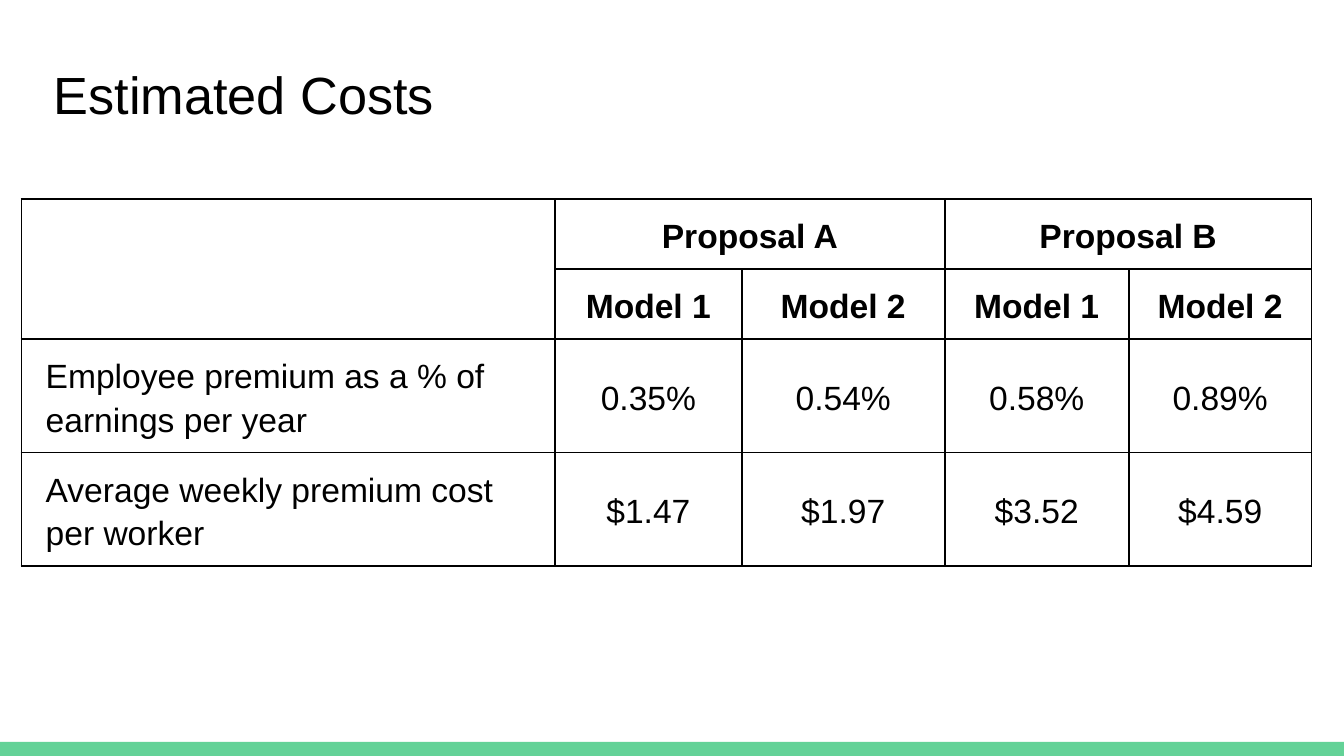
from typing import NamedTuple

from lxml.etree import SubElement
from pptx import Presentation
from pptx.dml.color import RGBColor
from pptx.enum.shapes import MSO_SHAPE as Shape
from pptx.enum.text import MSO_ANCHOR as Anchor, PP_ALIGN as Align
from pptx.oxml.ns import qn
from pptx.util import Inches, Pt

COLORS = {"text": "000000", "border": "000000", "accent": "63D297"}
FONT = "Arial"
SLIDE_WIDTH = Inches(10)
SLIDE_HEIGHT = SLIDE_WIDTH * 9 // 16
COLUMN_WIDTHS = [3.97, 1.39, 1.51, 1.37, 1.36]
ROW_HEIGHTS = [0.37, 0.37, 0.56, 0.48]
TITLE_MARGINS = dict.fromkeys(
    ["margin_left", "margin_top", "margin_right", "margin_bottom"], Inches(0.1))
CELL_FORMAT = {
    "margin_left": Inches(0.08), "margin_right": Inches(0.08),
    "margin_top": Inches(0.1), "margin_bottom": Inches(0.1),
    "vertical_anchor": Anchor.MIDDLE,
}
PARAGRAPH_INDENTS = {"marL": Inches(0.1), "marR": Inches(0.1), "indent": 0}


class CellText(NamedTuple):
    row: int
    column: int
    text: str
    bold: bool = False
    align: Align = Align.CENTER
    space_after: int = 0


class CostRow(NamedTuple):
    label: str
    values: list[str]


PROPOSALS = ["Proposal A", "Proposal B"]
MODELS = ["Model 1", "Model 2"]
COST_ROWS = [
    CostRow("Employee premium as a % of earnings per year",
            ["0.35%", "0.54%", "0.58%", "0.89%"]),
    CostRow("Average weekly premium cost per worker",
            ["$1.47", "$1.97", "$3.52", "$4.59"]),
]


def apply_format(target, values: dict) -> None:
    for name, value in values.items():
        setattr(target, name, value)


def format_font(font, size: int, bold: bool = False) -> None:
    apply_format(font, {"name": FONT, "size": Pt(size), "bold": bold})
    font.color.rgb = RGBColor.from_string(COLORS["text"])


def add_borders(cell) -> None:
    properties = cell._tc.get_or_add_tcPr()
    for index, side in enumerate(["lnL", "lnR", "lnT", "lnB"]):
        line = SubElement(properties, qn(f"a:{side}"), w=str(Pt(1)))
        fill = SubElement(line, qn("a:solidFill"))
        SubElement(fill, qn("a:srgbClr"), val=COLORS["border"])
        properties.insert(index, line)


def write_cell(table, entry: CellText) -> None:
    cell = table.cell(entry.row, entry.column)
    cell.text = entry.text
    paragraph = cell.text_frame.paragraphs[0]
    apply_format(paragraph, {"alignment": entry.align, "line_spacing": 1.15,
                             "space_after": Pt(entry.space_after)})
    properties = paragraph._p.get_or_add_pPr()
    for name, value in PARAGRAPH_INDENTS.items():
        properties.set(name, str(value))
    format_font(paragraph.runs[0].font, 18, entry.bold)


def add_cost_table(slide) -> None:
    table = slide.shapes.add_table(
        len(ROW_HEIGHTS), len(COLUMN_WIDTHS), Inches(0.16), Inches(1.48),
        Inches(sum(COLUMN_WIDTHS)), Inches(sum(ROW_HEIGHTS))).table
    apply_format(table, {"first_row": False, "horz_banding": False})
    for column, width in zip(table.columns, COLUMN_WIDTHS):
        column.width = Inches(width)
    for row, height in zip(table.rows, ROW_HEIGHTS):
        row.height = Inches(height)
    for cell in table.iter_cells():
        apply_format(cell, CELL_FORMAT)
        cell.fill.background()
        add_borders(cell)

    # Header: empty corner, then each proposal over its models
    table.cell(0, 0).merge(table.cell(1, 0))
    for index, proposal in enumerate(PROPOSALS):
        first = 1 + index * len(MODELS)
        table.cell(0, first).merge(table.cell(0, first + len(MODELS) - 1))
        write_cell(table, CellText(0, first, proposal, bold=True))
        for column, model in enumerate(MODELS, first):
            write_cell(table, CellText(1, column, model, bold=True))

    # Body: label and one value per model
    for row, cost in enumerate(COST_ROWS, 2):
        write_cell(table, CellText(row, 0, cost.label, align=Align.LEFT, space_after=6))
        for column, value in enumerate(cost.values, 1):
            write_cell(table, CellText(row, column, value, space_after=6))


def add_footer_bar(slide) -> None:
    bar = slide.shapes.add_shape(
        Shape.RECTANGLE, Inches(0), Inches(5.52), SLIDE_WIDTH, Inches(0.11))
    bar.shadow.inherit = False
    bar.fill.solid()
    bar.fill.fore_color.rgb = RGBColor.from_string(COLORS["accent"])
    bar.line.fill.background()


def format_title(slide, text: str) -> None:
    title = slide.shapes.title
    apply_format(title, {"left": Inches(0.3), "top": Inches(0.36),
                         "width": Inches(9.32), "height": Inches(0.63)})
    frame = title.text_frame
    frame.text = text
    apply_format(frame, {**TITLE_MARGINS, "vertical_anchor": Anchor.TOP,
                         "word_wrap": True})
    paragraph = frame.paragraphs[0]
    paragraph.alignment = Align.LEFT
    format_font(paragraph.runs[0].font, 28)


def main() -> None:
    presentation = Presentation()
    presentation.slide_width = SLIDE_WIDTH
    presentation.slide_height = SLIDE_HEIGHT
    slide = presentation.slides.add_slide(presentation.slide_layouts[5])
    add_footer_bar(slide)
    format_title(slide, "Estimated Costs")
    add_cost_table(slide)
    presentation.save("out.pptx")


if __name__ == "__main__":
    main()
